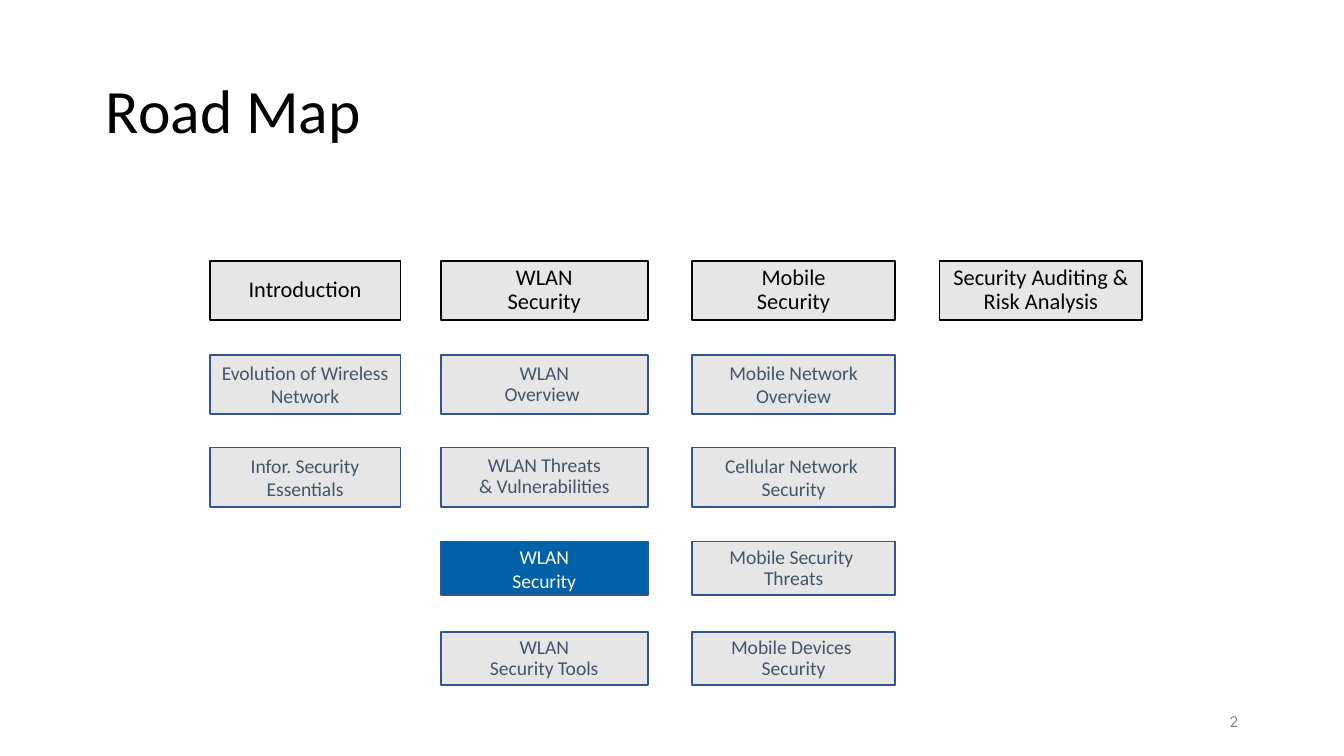
from dataclasses import dataclass

from pptx import Presentation
from pptx.dml.color import RGBColor
from pptx.enum.shapes import MSO_SHAPE as Shape
from pptx.enum.text import MSO_ANCHOR as Anchor, PP_ALIGN as Align
from pptx.util import Inches, Pt


@dataclass(frozen=True)
class Theme:
    font: str = "Calibri"
    black: str = "000000"
    white: str = "FFFFFF"
    gray: str = "8C8C8C"
    slate: str = "44546A"
    panel: str = "E7E6E6"
    border: str = "325491"
    accent: str = "0060A8"
    title_size: float = 33
    header_size: float = 12
    topic_size: float = 10.5
    number_size: float = 9
    line_width: float = 1
    snug: float = 0.9


@dataclass(frozen=True)
class Style:
    size: float
    color: str
    fill: str = ""
    border: str = ""
    spacing: float = 1.0
    margins: tuple = (0.1, 0.05)
    align: Align = Align.CENTER


THEME = Theme()
TITLE = Style(THEME.title_size, THEME.black, spacing=THEME.snug, align=Align.LEFT)
NUMBER = Style(THEME.number_size, THEME.gray, align=Align.RIGHT)
HEADER = Style(THEME.header_size, THEME.black, THEME.panel, THEME.black, THEME.snug)
OPEN = Style(THEME.topic_size, THEME.slate, THEME.panel, THEME.border, margins=(0, 0))
SNUG = Style(THEME.topic_size, THEME.slate, THEME.panel, THEME.border, THEME.snug, (0, 0.05))
CURRENT = Style(THEME.topic_size, THEME.white, THEME.accent, THEME.border, margins=(0, 0))

COLUMNS = [(1.56, 1.42), (3.28, 1.54), (5.15, 1.51), (6.99, 1.51)]
ROWS = [(1.94, 0.44), (2.64, 0.44), (3.33, 0.44), (4.03, 0.4), (4.7, 0.4)]

ROAD_MAP = [
    [
        (HEADER, ["Introduction"]),
        (OPEN, ["Evolution of Wireless Network"]),
        (OPEN, ["Infor. Security", "Essentials"]),
    ],
    [
        (HEADER, ["WLAN", "Security"]),
        (SNUG, ["WLAN", "Overview "]),
        (SNUG, ["WLAN Threats", "& Vulnerabilities"]),
        (CURRENT, ["WLAN", "Security"]),
        (SNUG, ["WLAN", "Security Tools"]),
    ],
    [
        (HEADER, ["Mobile", "Security"]),
        (OPEN, ["Mobile Network", "Overview"]),
        (OPEN, ["Cellular Network ", "Security"]),
        (SNUG, ["Mobile Security ", "Threats"]),
        (SNUG, ["Mobile Devices ", "Security"]),
    ],
    [(HEADER, ["Security Auditing & Risk Analysis"])],
]


def write_lines(box, lines, style):
    frame = box.text_frame
    frame.word_wrap = True
    frame.vertical_anchor = Anchor.MIDDLE
    side, edge = map(Inches, style.margins)
    frame.margin_left = frame.margin_right = side
    frame.margin_top = frame.margin_bottom = edge
    for index, line in enumerate(lines):
        para = frame.add_paragraph() if index else frame.paragraphs[0]
        para.alignment = style.align
        para.line_spacing = style.spacing
        span = para.add_run()
        span.text = line
        span.font.name = THEME.font
        span.font.size = Pt(style.size)
        span.font.color.rgb = RGBColor.from_string(style.color)


def add_label(page, area, text, style):
    box = page.shapes.add_textbox(*map(Inches, area))
    write_lines(box, [text], style)


def add_topic(page, column, row, lines, style):
    left, width = COLUMNS[column]
    top, height = ROWS[row]
    box = page.shapes.add_shape(Shape.RECTANGLE, *map(Inches, (left, top, width, height)))
    box.shadow.inherit = False
    box.fill.solid()
    box.fill.fore_color.rgb = RGBColor.from_string(style.fill)
    box.line.color.rgb = RGBColor.from_string(style.border)
    box.line.width = Pt(THEME.line_width)
    write_lines(box, lines, style)


def main():
    deck = Presentation()
    deck.slide_width = Inches(10)
    deck.slide_height = deck.slide_width * 9 // 16
    page = deck.slides.add_slide(deck.slide_layouts[6])
    add_label(page, (0.69, 0.3, 8.62, 1.09), "Road Map", TITLE)
    add_label(page, (7.06, 5.21, 2.25, 0.3), "2", NUMBER)
    for column, topics in enumerate(ROAD_MAP):
        for row, (style, lines) in enumerate(topics):
            add_topic(page, column, row, lines, style)
    deck.save("out.pptx")


if __name__ == "__main__":
    main()
